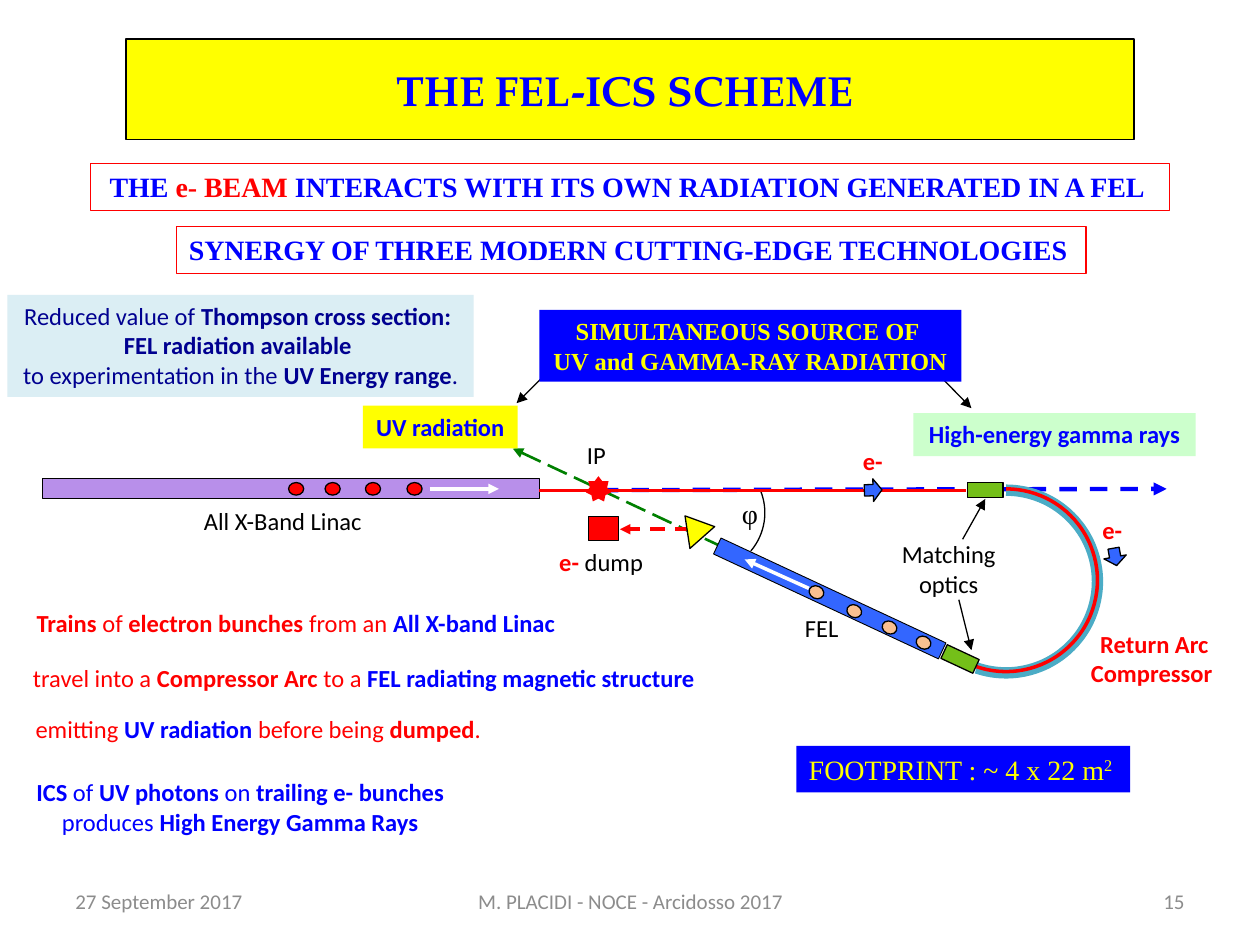
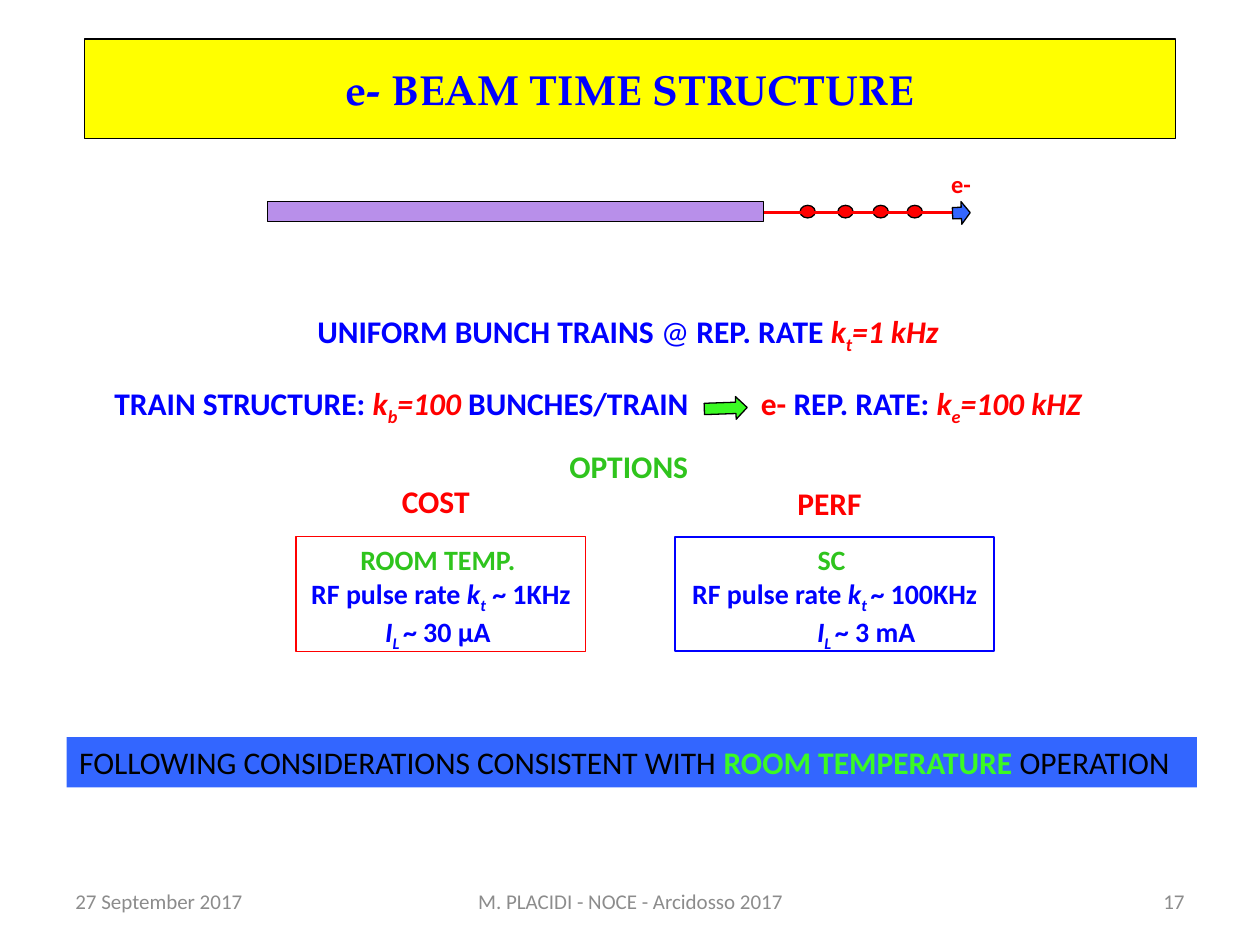
from pptx import Presentation
from pptx.dml.color import RGBColor
from pptx.enum.dml import MSO_LINE
from pptx.enum.shapes import MSO_CONNECTOR, MSO_SHAPE
from pptx.enum.text import MSO_ANCHOR, MSO_AUTO_SIZE, PP_ALIGN
from pptx.oxml.ns import qn
from pptx.util import Inches, Pt
from lxml import etree

RECT, OVAL, ARC = MSO_SHAPE.RECTANGLE, MSO_SHAPE.OVAL, MSO_SHAPE.ARC
ARROW, STAR = MSO_SHAPE.RIGHT_ARROW, MSO_SHAPE.STAR_7_POINT
WEDGE = MSO_SHAPE.ISOSCELES_TRIANGLE
LINE = MSO_CONNECTOR.STRAIGHT
DASH, LONG = MSO_LINE.DASH, MSO_LINE.LONG_DASH
MIDDLE, FIT, FIXED = MSO_ANCHOR.MIDDLE, MSO_AUTO_SIZE.SHAPE_TO_FIT_TEXT, MSO_AUTO_SIZE.NONE
ALIGN = {"l": PP_ALIGN.LEFT, "c": PP_ALIGN.CENTER, "r": PP_ALIGN.RIGHT}

BLACK = RGBColor(0, 0, 0)
WHITE = RGBColor(0xFF, 0xFF, 0xFF)
RED = RGBColor(0xFF, 0, 0)
BLUE = RGBColor(0, 0, 0xFF)
NAVY = RGBColor(0, 0, 0x90)
YELLOW = RGBColor(0xFF, 0xFF, 0)
GREEN = RGBColor(0x2F, 0xC4, 0x1D)
LIME = RGBColor(0x3B, 0xFA, 0x24)
DARK = RGBColor(0, 0x80, 0)
GRAY = RGBColor(0x8C, 0x8C, 0x8C)
ROYAL = RGBColor(0x33, 0x66, 0xFF)
LILAC = RGBColor(0xB8, 0x8F, 0xEA)
PEACH = RGBColor(0xFA, 0xC0, 0x90)
GRASS = RGBColor(0x74, 0xBF, 0x19)
MINT = RGBColor(0xCC, 0xFF, 0xCC)
ICE = RGBColor(0xDB, 0xEE, 0xF4)
TEAL = RGBColor(0x4B, 0xAC, 0xC6)

SANS, SERIF, HEAD = "Calibri", "Times New Roman", "TeX Gyre Pagella"

# Run style: a colour letter, then b bold, i italic, _ subscript, ^ superscript
INK = {"K": BLACK, "R": RED, "B": BLUE, "N": NAVY, "Y": YELLOW,
       "G": GREEN, "L": LIME, "A": GRAY}
BASE = {"_": "-25000", "^": "30000"}

# ---- Content: (box, paragraphs of runs, options) ----
DATE, PLACE = "27 September 2017", "M. PLACIDI - NOCE - Arcidosso 2017"

SCHEME = [
    ((0.06, 2.34, 3.7, 0.81),
     [[("Reduced value of ", "N"), ("Thompson cross section: ", "Nb")],
      [("FEL radiation available ", "Nb")],
      [("to experimentation in the ", "N"), ("UV Energy range", "Nb"), (".", "N")]],
     {"align": "c", "fill": ICE}),
    ((0.72, 1.3, 8.56, 0.37),
     [[(" THE ", "Bb"), ("e- BEAM ", "Rb"),
       ("INTERACTS WITH ITS OWN RADIATION GENERATED IN A FEL", "Bb")]],
     {"size": 16, "font": SERIF, "edge": RED}),
    ((1.4, 1.8, 7.22, 0.37),
     [[("SYNERGY OF THREE MODERN CUTTING-EDGE TECHNOLOGIES", "Bb")]],
     {"size": 16, "font": SERIF, "edge": RED}),
    ((4.28, 2.46, 3.35, 0.57),
     [[("SIMULTANEOUS SOURCE OF ", "Yb")], [("UV and GAMMA-RAY RADIATION", "Yb")]],
     {"align": "c", "font": SERIF, "fill": BLUE}),
    ((2.88, 3.22, 1.23, 0.34), [[("UV radiation", "Bb")]],
     {"align": "c", "fill": YELLOW}),
    ((7.25, 3.28, 2.24, 0.34), [[("High-energy gamma rays", "Bb")]],
     {"align": "c", "fill": MINT}),
    ((1.52, 3.97, 1.48, 0.34), [[("All X-Band Linac", "K")]], {}),
    ((4.34, 4.29, 0.87, 0.34), [[("e- ", "Rb"), ("dump", "K")]], {}),
    ((4.56, 3.44, 0.35, 0.34), [[("IP", "K")]], {}),
    ((5.79, 3.89, 0.33, 0.37), [[("φ", "K")]], {"size": 16, "font": SERIF}),
    ((6.29, 4.82, 0.47, 0.34), [[("FEL", "K")]], {}),
    ((8.65, 4.04, 0.36, 0.34), [[("e-", "Rb")]], {}),
    ((8.55, 4.94, 1.18, 0.57),
     [[(" ", "R"), ("Return Arc", "Rb")], [("Compressor", "Rb")]], {"align": "c"}),
    ((7.05, 4.23, 0.96, 0.57), [[("Matching", "K")], [("optics", "K")]],
     {"align": "c"}),
    ((0.17, 4.78, 4.4, 0.34),
     [[("Trains", "Rb"), (" of ", "R"), ("electron bunches ", "Rb"),
       ("from an ", "R"), ("All X-band Linac ", "Bb")]], {"align": "c"}),
    ((0.16, 5.21, 5.5, 0.34),
     [[("travel into a ", "R"), ("Compressor Arc ", "Rb"), ("to a ", "R"),
       ("FEL radiating magnetic structure ", "Bb")]], {"align": "c"}),
    ((0.17, 5.62, 3.76, 0.34),
     [[("emitting ", "R"), ("UV radiation ", "Bb"), ("before being ", "R"),
       ("dumped", "Rb"), (". ", "R")]], {"align": "c"}),
    ((0.19, 6.12, 3.46, 0.57),
     [[("ICS", "Bb"), (" of ", "B"), ("UV photons", "Bb"), (" on ", "B"),
       ("trailing e- bunches", "Bb")],
      [("produces ", "B"), ("High Energy Gamma Rays", "Bb")]], {"align": "lc"}),
    ((6.32, 5.92, 2.65, 0.37),
     [[("FOOTPRINT : ~ 4 x 22 m", "Y"), ("2", "Y^")]],
     {"size": 16, "font": SERIF, "fill": BLUE}),
]

TIMING = [
    ((2.42, 2.43, 5.13, 0.4),
     [[("UNIFORM BUNCH TRAINS ", "Bb"), ("@ ", "B"), ("REP. RATE ", "Bb"),
       ("k", "Rbi"), ("t", "Rbi_"), ("=1 kHz", "Rbi")]], {"size": 18}),
    ((0.81, 3, 4.76, 0.4),
     [[("TRAIN STRUCTURE: ", "Bb"), ("k", "Rbi"), ("b", "Rbi_"),
       ("=100", "Rbi"), (" BUNCHES/TRAIN", "Bb")]], {"size": 18}),
    ((5.94, 3, 2.75, 0.4),
     [[("e- ", "Rb"), ("REP. RATE: ", "Bb"), ("k", "Rbi"), ("e", "Rbi_"),
       ("=100 kHZ", "Rbi")]], {"size": 18}),
    ((4.42, 3.5, 1.16, 0.4), [[("OPTIONS", "Gb")]], {"size": 18}),
    ((3.09, 3.78, 0.75, 0.4), [[("COST", "Rb")]], {"size": 18}),
    ((6.23, 3.79, 0.72, 0.4), [[("PERF", "Rb")]], {"size": 18}),
    ((2.35, 4.26, 2.3, 0.91),
     [[("ROOM TEMP. ", "Gb")],
      [("RF pulse rate ", "Bb"), ("k", "Bbi"), ("t", "Bbi_"), (" ~ 1KHz", "Bb")],
      [("I", "Bbi"), ("L ", "Bbi_"), ("~ 30 μA ", "Bb")]],
     {"size": 16, "align": "c", "edge": RED}),
    ((5.36, 4.26, 2.53, 0.91),
     [[("SC ", "Gb")],
      [("RF pulse rate ", "Bb"), ("k", "Bbi"), ("t ", "Bbi_"), ("~ 100KHz", "Bb")],
      [("I", "Bbi"), ("L ", "Bbi_"), ("~ 3 mA", "Bb")]],
     {"size": 16, "align": "c", "edge": BLUE, "width": 1, "levels": (0, 0, 1)}),
    ((0.53, 5.85, 8.97, 0.4),
     [[("FOLLOWING CONSIDERATIONS CONSISTENT WITH ", "K"),
       ("ROOM TEMPERATURE ", "Lb"), ("OPERATION", "K")]],
     {"size": 18, "fill": ROYAL}),
]

FEL_DOTS = [(6.42, 4.65), (6.72, 4.8), (7, 4.93), (7.27, 5.05)]


# ---- Drawing helpers ----
def paint(item, fill, edge, width):
    if fill is None:
        item.fill.background()
    else:
        item.fill.solid()
        item.fill.fore_color.rgb = fill
    if edge is None:
        item.line.fill.background()
    else:
        item.line.color.rgb = edge
        item.line.width = Pt(width)


def label(slide, box, paras, size=14, font=SANS, align="l", fill=None,
          edge=None, width=0.75, levels=(), fixed=False):
    item = slide.shapes.add_textbox(*map(Inches, box))
    paint(item, fill, edge, width)
    frame = item.text_frame
    frame.word_wrap = fixed
    frame.auto_size = FIXED if fixed else FIT
    if fixed:
        frame.vertical_anchor = MIDDLE
    for i, runs in enumerate(paras):
        para = frame.add_paragraph() if i else frame.paragraphs[0]
        para.alignment = ALIGN[align[min(i, len(align) - 1)]]
        if levels:
            para.level = levels[i]
        for words, style in runs:
            run = para.add_run()
            run.text = words
            run.font.name, run.font.size = font, Pt(size)
            run.font.color.rgb = INK[style[0]]
            run.font.bold, run.font.italic = "b" in style, "i" in style
            if style[-1] in BASE:
                run.font._element.set("baseline", BASE[style[-1]])


def part(slide, kind, box, fill, edge=BLACK, width=0.75, turn=0, adj=()):
    item = slide.shapes.add_shape(kind, *map(Inches, box))
    item.shadow.inherit = False
    item.rotation = turn
    paint(item, fill, edge, width)
    for i, value in enumerate(adj):
        item.adjustments[i] = value


def wire(slide, start, end, color=BLACK, width=0.75, dash=None, tip="tailEnd"):
    item = slide.shapes.add_connector(LINE, *map(Inches, start + end))
    item.line.color.rgb = color
    item.line.width = Pt(width)
    if dash:
        item.line.dash_style = dash
    props = item.element.spPr
    if tip:
        etree.SubElement(props.find(qn("a:ln")), qn(f"a:{tip}"), type="triangle")
    etree.SubElement(props, qn("a:effectLst"))


def linac(slide, left, top, dots, stop, mark):
    """Linac bar with bunches, the beam leaving it and the e- marker."""
    edge = left + 3.94
    part(slide, RECT, (left, top, 3.94, 0.16), LILAC, width=0.5)
    for x in dots:
        part(slide, OVAL, (x, top + 0.03, 0.12, 0.1), RED)
    wire(slide, (edge, top + 0.09), (stop, top + 0.09), RED, 1.75, tip=None)
    label(slide, (mark - 0.11, top - 0.31, 0.36, 0.34), [[("e-", "Rb")]])
    part(slide, ARROW, (mark, top, 0.14, 0.18), ROYAL, turn=358)


def start(deck, title, box, number):
    """New slide with title band and footer."""
    slide = deck.slides.add_slide(deck.slide_layouts[6])
    label(slide, box, [[(title, "Bb")]], 24, HEAD, "c", YELLOW, BLACK, fixed=True)
    for left, wide, words, align in ((0.5, 2.33, DATE, "l"), (3.42, 3.17, PLACE, "c"),
                                     (7.17, 2.33, number, "r")):
        label(slide, (left, 6.95, wide, 0.4), [[(words, "A")]], 12,
              align=align, fixed=True)
    return slide


# ---- Slides ----
def scheme(deck):
    slide = start(deck, "THE FEL-ICS SCHEME ", (1, 0.31, 8, 0.8), "15")
    # Source pointers
    wire(slide, (7.27, 2.79), (7.71, 3.24))
    wire(slide, (4.51, 2.79), (4.1, 3.2))
    # UV light and dump
    wire(slide, (4.07, 3.56), (5.71, 4.33), DARK, 1.5, LONG, "headEnd")
    wire(slide, (5.47, 4.2), (4.92, 4.2), RED, 2, DASH)
    part(slide, RECT, (4.67, 4.1, 0.24, 0.19), RED)
    part(slide, WEDGE, (5.39, 4.13, 0.25, 0.23), YELLOW, turn=200)
    # Gamma rays and interaction point
    wire(slide, (4.77, 3.89), (9.26, 3.88), BLUE, 2.5, DASH)
    part(slide, STAR, (4.65, 3.78, 0.2, 0.2), RED, None)
    # Crossing angle and return arc
    part(slide, ARC, (5.13, 3.6, 0.94, 0.94), None, turn=54, adj=(170.14, 207.67))
    bend = (162, 65.33)
    part(slide, ARC, (7.26, 3.89, 1.45, 1.45), None, TEAL, 6.5, adj=bend)
    linac(slide, 0.34, 3.8, (2.29, 2.58, 2.9, 3.23), 7.67, 6.86)
    wire(slide, (3.41, 3.88), (3.96, 3.88), WHITE, 2)
    # FEL
    part(slide, RECT, (5.6, 4.68, 1.97, 0.14), ROYAL, width=0.5, turn=25)
    for x, y in FEL_DOTS:
        part(slide, OVAL, (x, y, 0.12, 0.1), PEACH, turn=205)
    wire(slide, (6.42, 4.67), (5.91, 4.44), WHITE, 2)
    part(slide, ARROW, (8.78, 4.33, 0.14, 0.18), ROYAL, turn=80)
    part(slide, ARC, (7.26, 3.88, 1.45, 1.45), None, RED, 2, adj=bend)
    # Matching optics
    part(slide, RECT, (7.48, 5.17, 0.28, 0.12), GRASS, turn=25)
    part(slide, RECT, (7.68, 3.83, 0.28, 0.12), GRASS)
    wire(slide, (7.61, 4.76), (7.71, 5.16))
    wire(slide, (7.64, 4.28), (7.82, 3.96))
    for box, paras, opts in SCHEME:
        label(slide, box, paras, **opts)


def timing(deck):
    slide = start(deck, "e- BEAM TIME STRUCTURE", (0.67, 0.31, 8.66, 0.79), "17")
    linac(slide, 2.12, 1.6, (6.35, 6.65, 6.93, 7.2), 7.56, 7.56)
    for box, paras, opts in TIMING:
        label(slide, box, paras, **opts)
    part(slide, ARROW, (5.59, 3.15, 0.34, 0.18), LIME, turn=358)


def main():
    deck = Presentation()
    deck.slide_width, deck.slide_height = Inches(10), Inches(7.5)
    scheme(deck)
    timing(deck)
    deck.save("out.pptx")


if __name__ == "__main__":
    main()
